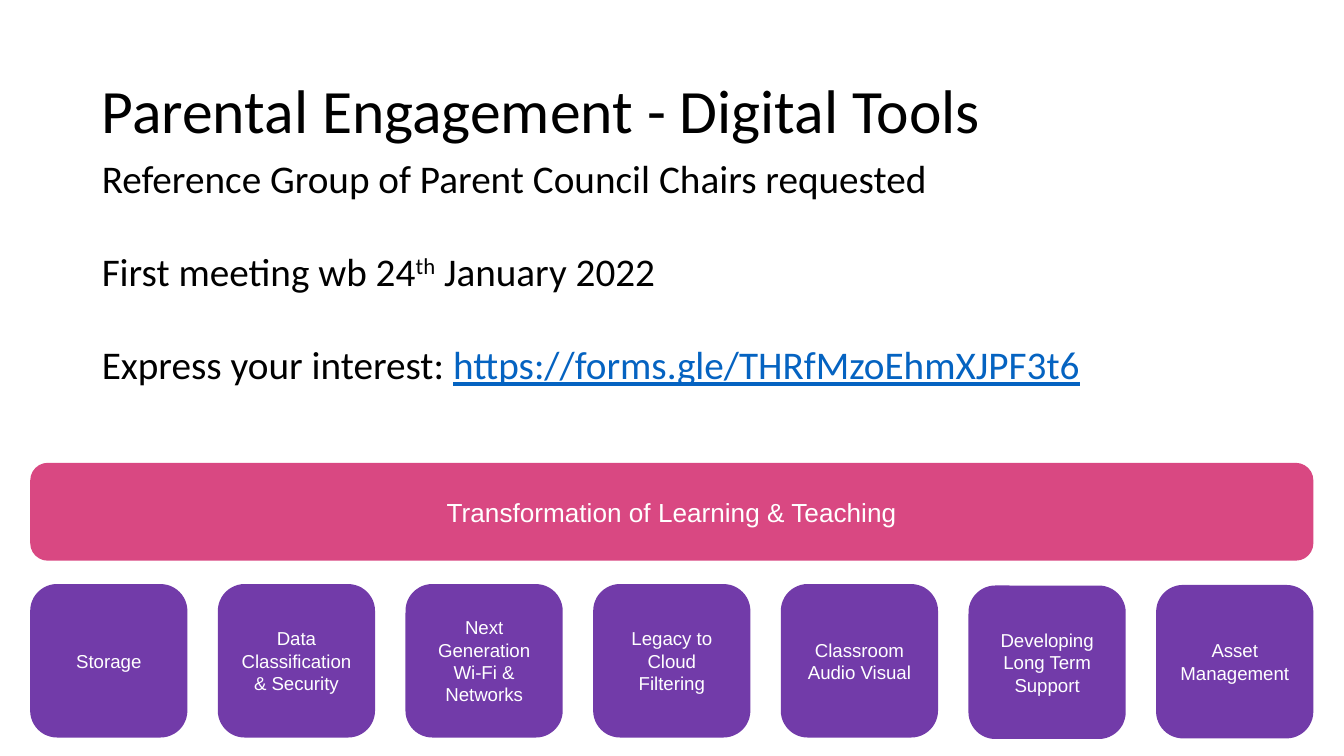
from pptx import Presentation
from pptx.dml.color import RGBColor
from pptx.enum.shapes import MSO_SHAPE
from pptx.enum.text import MSO_ANCHOR, PP_ALIGN
from pptx.util import Pt

ROUNDED = MSO_SHAPE.ROUNDED_RECTANGLE
TOP, MIDDLE = MSO_ANCHOR.TOP, MSO_ANCHOR.MIDDLE
CENTER = PP_ALIGN.CENTER

BLACK, WHITE, LINK = "000000", "FFFFFF", "0563C1"
PINK, PURPLE = "D94882", "723BA9"


def rgb(value):
    return RGBColor.from_string(value)


class SlideBuilder:
    """Draws styled text and rounded tiles on one slide."""

    text_font = "Calibri"
    tile_font = "Arial"
    line_spacing = 0.9
    paragraph_gap = 27.3

    def __init__(self, page):
        self.page = page

    def style(self, para, name, size, color):
        para.font.name = name
        para.font.size = Pt(size)
        para.font.color.rgb = rgb(color)

    def text(self, left, top, width, height, paragraphs, size, anchor=TOP):
        box = self.page.shapes.add_textbox(Pt(left), Pt(top), Pt(width), Pt(height))
        frame = box.text_frame
        frame.word_wrap = True
        frame.vertical_anchor = anchor
        frame.margin_left = frame.margin_right = Pt(5.04)
        frame.margin_top = frame.margin_bottom = Pt(2.7)
        for index, spans in enumerate(paragraphs):
            para = frame.add_paragraph() if index else frame.paragraphs[0]
            para.line_spacing = self.line_spacing
            para.space_before = Pt(self.paragraph_gap if index else 0)
            self.style(para, self.text_font, size, BLACK)
            for words, kind in spans:
                span = para.add_run()
                span.text = words
                if kind == "super":
                    span._r.get_or_add_rPr().set("baseline", "30000")
                elif kind == "link":
                    span.font.color.rgb = rgb(LINK)
                    span.font.underline = True

    def tile(self, left, top, width, height, label, color, size):
        box = self.page.shapes.add_shape(
            ROUNDED, Pt(left), Pt(top), Pt(width), Pt(height))
        box.shadow.inherit = False
        box.fill.solid()
        box.fill.fore_color.rgb = rgb(color)
        box.line.color.rgb = rgb(color)
        box.line.width = Pt(2)
        frame = box.text_frame
        frame.word_wrap = True
        frame.vertical_anchor = MIDDLE
        para = frame.paragraphs[0]
        para.text = label
        para.alignment = CENTER
        self.style(para, self.tile_font, size, WHITE)


def main():
    deck = Presentation()
    deck.slide_width, deck.slide_height = Pt(720), Pt(405)
    builder = SlideBuilder(deck.slides.add_slide(deck.slide_layouts[6]))

    builder.text(49.5, 21.6, 621, 78.3,
                 [[("Parental Engagement - Digital Tools", "plain")]], 33, MIDDLE)
    builder.text(49.5, 82.8, 621, 282, [
        [("Reference Group of Parent Council Chairs requested", "plain")],
        [("First meeting wb 24", "plain"), ("th", "super"), (" January 2022", "plain")],
        [("Express your interest: ", "plain"),
         ("https://forms.gle/THRfMzoEhmXJPF3t6", "link")],
    ], 21)

    left, total_width, tile_width = 17.2, 685.4, 82.2
    builder.tile(left, 249, total_width, 50.4,
                 "Transformation of Learning & Teaching", PINK, 14)

    tiles = [
        ("Storage", 313.9),
        ("Data Classification & Security", 313.9),
        ("Next Generation Wi-Fi & Networks", 313.9),
        ("Legacy to Cloud Filtering", 313.9),
        ("Classroom Audio Visual", 313.9),
        ("Developing Long Term Support", 314.7),
        ("Asset Management", 314.4),
    ]
    pitch = (total_width - tile_width) / (len(tiles) - 1)
    for index, (label, top) in enumerate(tiles):
        builder.tile(left + index * pitch, top, tile_width, 80.2, label, PURPLE, 10)

    deck.save("out.pptx")


if __name__ == "__main__":
    main()
